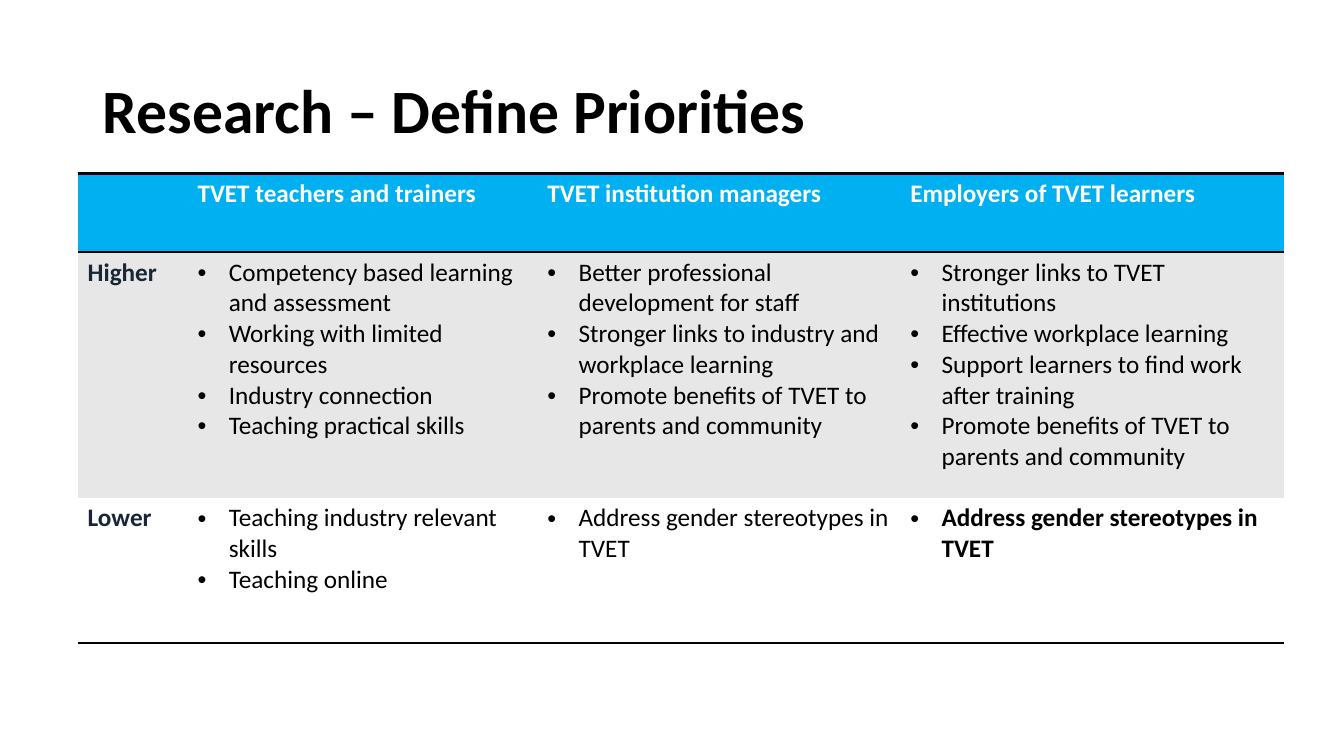
"""Build the slide on research priorities."""
from lxml.etree import SubElement
from pptx import Presentation
from pptx.dml.color import RGBColor
from pptx.enum.text import MSO_ANCHOR, PP_ALIGN
from pptx.oxml.ns import qn
from pptx.util import Inches, Pt

COLORS = {"black": "000000", "white": "FFFFFF", "blue": "00B0F0",
          "gray": "E7E7E7", "navy": "1A2637"}
PLAIN = "{2D5ABB26-0587-4C30-8999-92F81FD0307C}"
HEADS = ["", "TVET teachers and trainers", "TVET institution managers",
         "Employers of TVET learners"]
HIGHER = [
    ["Competency based learning and assessment",
     "Working with limited resources",
     "Industry connection",
     "Teaching practical skills"],
    ["Better professional development for staff",
     "Stronger links to industry and workplace learning",
     "Promote benefits of TVET to parents and community"],
    ["Stronger links to TVET institutions",
     "Effective workplace learning",
     "Support learners to find work after training",
     "Promote benefits of TVET to parents and community"],
]
LOWER = [
    ["Teaching industry relevant skills", "Teaching online"],
    ["Address gender stereotypes in TVET"],
    ["Address gender stereotypes in TVET"],
]
WIDTHS = [1.09, 3.47, 3.6, 3.81]
HEIGHTS = [0.78, 2.44, 1.44]


def write(para, text, color, size=18, bold=True):
    run = para.add_run()
    run.text = text
    style = {"name": "Calibri", "size": Pt(size), "bold": bold}
    for key, value in style.items():
        setattr(run.font, key, value)
    run.font.color.rgb = RGBColor.from_string(COLORS[color])


def bullet(para):
    props = para._p.get_or_add_pPr()
    indent = Inches(0.31)
    props.set("marL", str(indent))
    props.set("indent", str(-indent))
    SubElement(props, qn("a:buFont")).set("typeface", "Arial")
    SubElement(props, qn("a:buChar")).set("char", "•")


def rule(cell, side):
    line = SubElement(cell._tc.get_or_add_tcPr(), qn(f"a:ln{side}"))
    line.set("w", str(Pt(2)))
    fill = SubElement(line, qn("a:solidFill"))
    SubElement(fill, qn("a:srgbClr")).set("val", COLORS["black"])


def paint(cell, color, sides=""):
    for side in sides:
        rule(cell, side)
    cell.fill.solid()
    cell.fill.fore_color.rgb = RGBColor.from_string(COLORS[color])


def fill_list(cell, items, bold):
    frame = cell.text_frame
    for index, item in enumerate(items):
        para = frame.add_paragraph() if index else frame.paragraphs[0]
        bullet(para)
        write(para, item, "black", bold=bold)


def fill_row(cells, label, lists, color, sides="", strong=None):
    for cell in cells:
        paint(cell, color, sides)
    write(cells[0].text_frame.paragraphs[0], label, "navy")
    for index, items in enumerate(lists):
        fill_list(cells[index + 1], items, index == strong)


def add_title(slide, text):
    title = slide.shapes.title
    place = {"left": 0.92, "top": 0.4, "width": 11.5, "height": 1.45}
    for key, value in place.items():
        setattr(title, key, Inches(value))
    title.text_frame.vertical_anchor = MSO_ANCHOR.MIDDLE
    para = title.text_frame.paragraphs[0]
    para.alignment = PP_ALIGN.LEFT
    para.line_spacing = 0.9
    write(para, text, "black", size=44)


def add_grid(slide):
    frame = slide.shapes.add_table(
        len(HEIGHTS), len(WIDTHS), Inches(0.77), Inches(1.72),
        Inches(sum(WIDTHS)), Inches(sum(HEIGHTS)))
    table = frame.table
    table.horz_banding = False
    table._tbl.tblPr.find(qn("a:tableStyleId")).text = PLAIN
    for column, width in zip(table.columns, WIDTHS):
        column.width = Inches(width)
    for row, height in zip(table.rows, HEIGHTS):
        row.height = Inches(height)
    top, high, low = [list(row.cells) for row in table.rows]
    for cell, head in zip(top, HEADS):
        paint(cell, "blue", "TB")
        if head:
            write(cell.text_frame.paragraphs[0], head, "white")
    fill_row(high, "Higher", HIGHER, "gray")
    fill_row(low, "Lower", LOWER, "white", "B", strong=2)


def main():
    deck = Presentation()
    deck.slide_width, deck.slide_height = Inches(13.33), Inches(7.5)
    slide = deck.slides.add_slide(deck.slide_layouts[5])
    add_title(slide, "Research – Define Priorities")
    add_grid(slide)
    deck.save("out.pptx")


if __name__ == "__main__":
    main()
